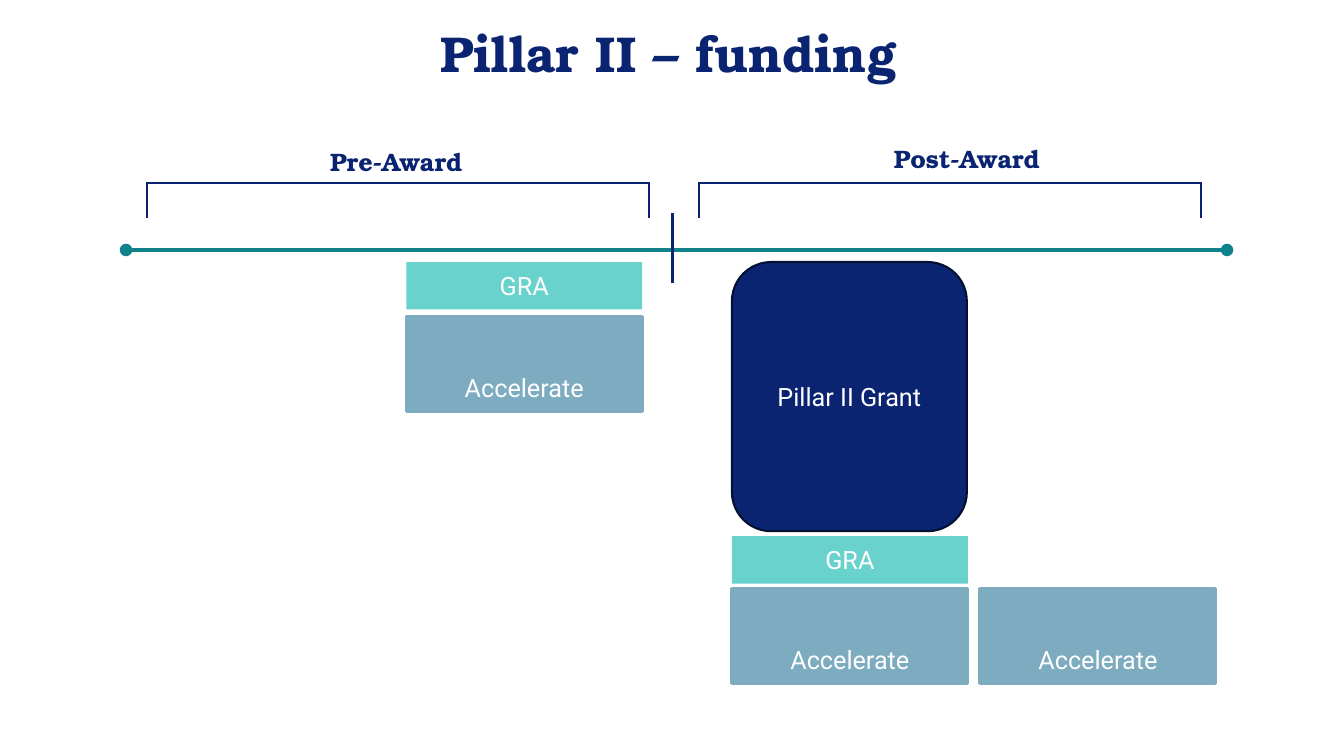
from lxml import etree
from pptx import Presentation
from pptx.dml.color import RGBColor
from pptx.enum.dml import MSO_PATTERN
from pptx.enum.shapes import MSO_CONNECTOR, MSO_SHAPE
from pptx.enum.text import MSO_ANCHOR, PP_ALIGN
from pptx.oxml.ns import qn
from pptx.util import Inches, Pt

NAVY = RGBColor(0x0A, 0x24, 0x71)
DARK_NAVY = RGBColor(0x04, 0x10, 0x32)
TEAL = RGBColor(0x11, 0x82, 0x8C)
MINT = RGBColor(0x69, 0xD2, 0xCD)
STEEL = RGBColor(0x7D, 0xAB, 0xBF)
WHITE = RGBColor(0xFF, 0xFF, 0xFF)
STRAIGHT = MSO_CONNECTOR.STRAIGHT
RECTANGLE = MSO_SHAPE.RECTANGLE
ROUNDED = MSO_SHAPE.ROUNDED_RECTANGLE
STRIPES = MSO_PATTERN.DARK_VERTICAL
CENTER = PP_ALIGN.CENTER
TOP = MSO_ANCHOR.TOP
MIDDLE = MSO_ANCHOR.MIDDLE
HEADING_FONT = "TeX Gyre Bonum"
BODY_FONT = "Roboto"

BLOCK_WIDTH = 2.34
BLOCK_HEIGHT = 0.47
PRE_LEFT = 4.03
POST_LEFT = 7.26
LATE_LEFT = 9.72


def write(shape, text, size, font, color, bold, anchor):
    frame = shape.text_frame
    frame.word_wrap = True
    frame.vertical_anchor = anchor
    paragraph = frame.paragraphs[0]
    paragraph.alignment = CENTER
    run = paragraph.add_run()
    run.text = text
    run.font.size = Pt(size)
    run.font.name = font
    run.font.color.rgb = color
    run.font.bold = bold
    return paragraph


def draw_line(x1, y1, x2, y2, color, width):
    line = slide.shapes.add_connector(
        STRAIGHT, Inches(x1), Inches(y1), Inches(x2), Inches(y2))
    line.line.color.rgb = color
    line.line.width = Pt(width)
    etree.SubElement(line._element.spPr, qn("a:effectLst"))
    return line


prs = Presentation()
prs.slide_width = Inches(13.33)
prs.slide_height = Inches(7.5)
slide = prs.slides.add_slide(prs.slide_layouts[5])

title = slide.shapes.title
title.left, title.top = Inches(0.88), Inches(0.24)
title.width, title.height = Inches(11.5), Inches(0.83)
heading = write(title, "Pillar II – funding", 36, HEADING_FONT, NAVY, True, TOP)
heading.line_spacing = 0.9

timeline = draw_line(1.25, 2.48, 12.17, 2.48, TEAL, 3)
for end in ("a:headEnd", "a:tailEnd"):
    etree.SubElement(timeline.line._get_or_add_ln(), qn(end), type="oval")
draw_line(6.67, 2.11, 6.67, 2.81, NAVY, 1.5)

phases = [
    ("Pre-Award", 1.46, 6.44, 2.93, 1.4),
    ("Post-Award", 6.93, 11.91, 8.59, 1.37),
]
for phase, start, finish, label_left, label_top in phases:
    for x in (start, finish):
        draw_line(x, 2.16, x, 1.81, NAVY, 1.5)
    draw_line(start, 1.82, finish, 1.82, NAVY, 1.5)
    label = slide.shapes.add_textbox(
        Inches(label_left), Inches(label_top), Inches(2), Inches(0.4))
    write(label, phase, 18, HEADING_FONT, NAVY, True, TOP)

grant = slide.shapes.add_shape(
    ROUNDED, Inches(POST_LEFT), Inches(2.6), Inches(2.33), Inches(2.67))
grant.shadow.inherit = False
grant.fill.solid()
grant.fill.fore_color.rgb = NAVY
grant.line.color.rgb = DARK_NAVY
grant.line.width = Pt(1.5)
write(grant, "Pillar II Grant", 18, BODY_FONT, WHITE, False, MIDDLE)

for left, top in [(PRE_LEFT, 2.6), (POST_LEFT, 5.32)]:
    gra = slide.shapes.add_shape(
        RECTANGLE, Inches(left), Inches(top), Inches(BLOCK_WIDTH), Inches(BLOCK_HEIGHT))
    gra.shadow.inherit = False
    gra.fill.solid()
    gra.fill.fore_color.rgb = MINT
    gra.line.fill.background()
    write(gra, "GRA", 18, BODY_FONT, WHITE, False, MIDDLE)

accelerate_blocks = [
    (PRE_LEFT, 3.14, WHITE),
    (LATE_LEFT, 5.84, WHITE),
    (POST_LEFT, 5.84, NAVY),
]
for left, top, stripe_back in accelerate_blocks:
    striped, labelled = [
        slide.shapes.add_shape(
            RECTANGLE, Inches(left), Inches(top + row * BLOCK_HEIGHT),
            Inches(BLOCK_WIDTH), Inches(BLOCK_HEIGHT))
        for row in range(2)
    ]
    for half in (striped, labelled):
        half.shadow.inherit = False
        half.line.color.rgb = STEEL
        half.line.width = Pt(2.25)
    striped.fill.patterned()
    striped.fill.pattern = STRIPES
    striped.fill.fore_color.rgb = STEEL
    striped.fill.back_color.rgb = stripe_back
    labelled.fill.solid()
    labelled.fill.fore_color.rgb = STEEL
    write(labelled, "Accelerate", 18, BODY_FONT, WHITE, False, MIDDLE)

prs.save("out.pptx")
